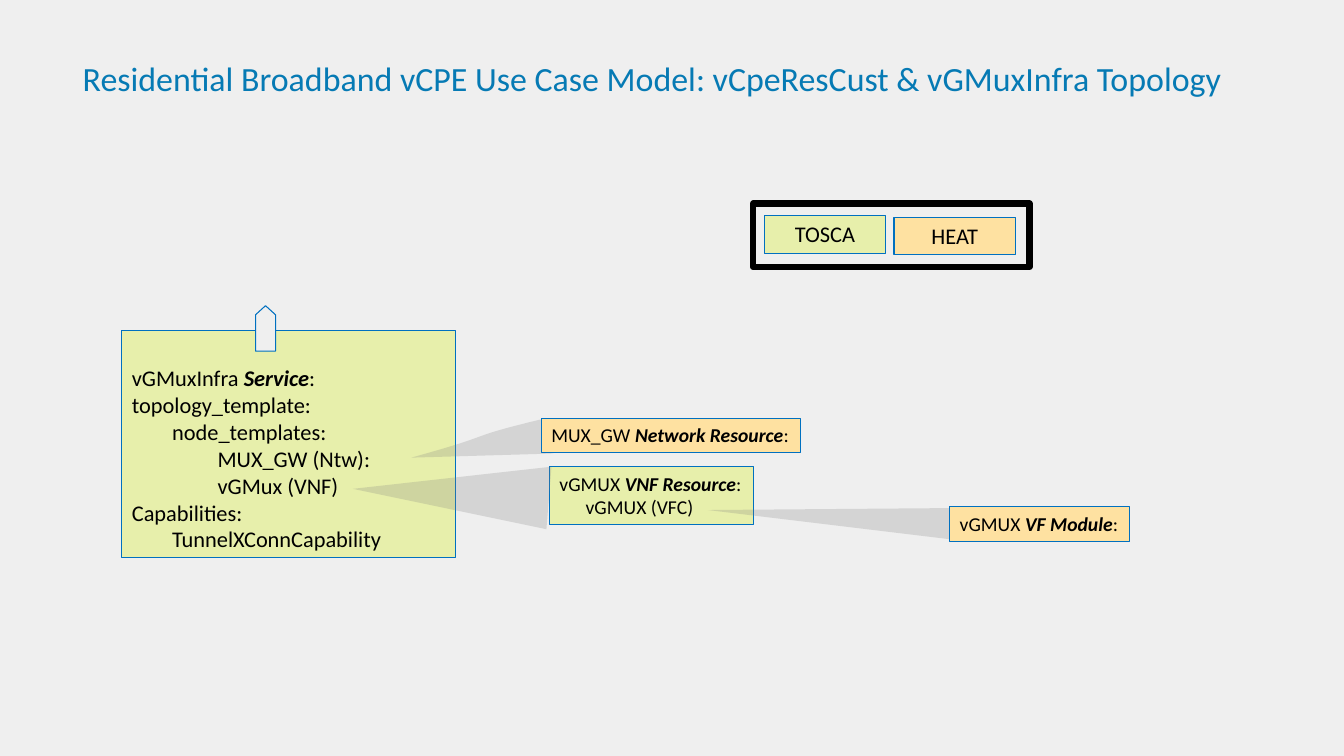
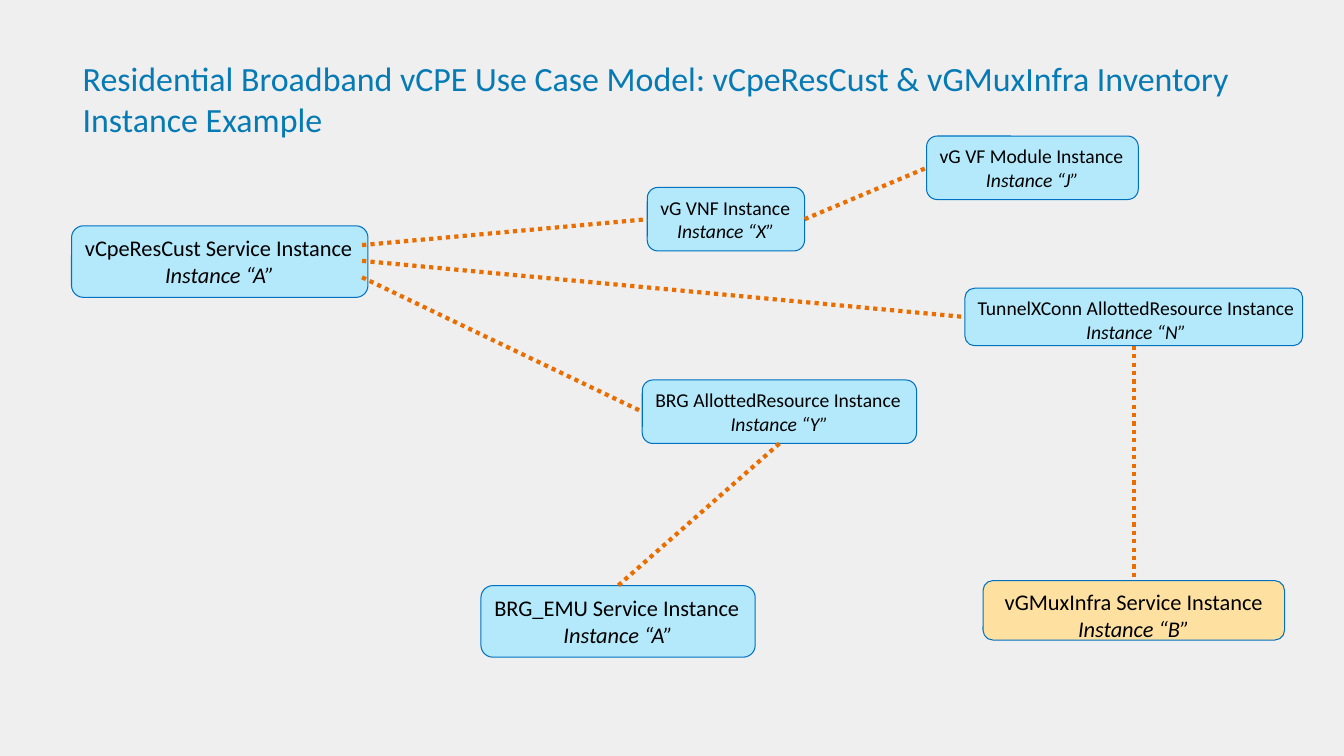
import dataclasses

import lxml.etree
import pptx
import pptx.dml.color
import pptx.enum.dml
import pptx.enum.shapes
import pptx.enum.text
import pptx.oxml.ns
import pptx.util

SLIDE_WIDTH, SLIDE_HEIGHT = pptx.util.Inches(13.33), pptx.util.Inches(7.5)
COLUMNS, ROWS = 133.3, 75  # square cells; every box is (column, row, columns, rows)

FONT = "Calibri"
BACKGROUND, TITLE_BLUE, BLACK = "EFEFEF", "067AB4", "000000"
GREEN, ORANGE, SKY = "E7EFAB", "FEE1A1", "B4E9FB"
OUTLINE, LINK, WEDGE = "0070C0", "EA6D00", "808080"
TITLE_SIZE, LARGE, SMALL = 24.2, 16, 14

SHAPE = pptx.enum.shapes.MSO_SHAPE
ALIGN = pptx.enum.text.PP_ALIGN
TOP, LEFT, BOTTOM, RIGHT = range(4)  # connection sites of a box


@dataclasses.dataclass
class Line:
    """One paragraph: plain text, a bold italic part, then a plain tail."""
    text: str
    strong: str = ""
    tail: str = ""
    indent: float = 0
    centred: bool = False
    italic: bool = False


def x(column):
    return round(SLIDE_WIDTH * column / COLUMNS)


def y(row):
    return round(SLIDE_HEIGHT * row / ROWS)


def place(box):
    left, top, width, height = box
    return x(left), y(top), x(width), y(height)


def within(box, share):
    """Turn shares of a box into a box on the slide grid."""
    left, top, width, height = box
    return (left + share[0] * width, top + share[1] * height,
            share[2] * width, share[3] * height)


def rgb(color):
    return pptx.dml.color.RGBColor.from_string(color)


def paint(shape, fill=None, line=None, weight=0.75):
    shape.shadow.inherit = False
    if fill:
        shape.fill.solid()
        shape.fill.fore_color.rgb = rgb(fill)
    else:
        shape.fill.background()
    if line:
        shape.line.color.rgb = rgb(line)
        shape.line.width = pptx.util.Pt(weight)
    else:
        shape.line.fill.background()


def set_font(paragraph, size, color):
    paragraph.font.name = FONT
    paragraph.font.size = pptx.util.Pt(size)
    paragraph.font.color.rgb = rgb(color)


def write(frame, lines, size):
    frame.word_wrap = False
    frame.vertical_anchor = pptx.enum.text.MSO_ANCHOR.TOP
    for number, line in enumerate(lines):
        paragraph = frame.add_paragraph() if number else frame.paragraphs[0]
        paragraph.alignment = ALIGN.CENTER if line.centred else ALIGN.LEFT
        if line.indent:
            properties = paragraph._p.get_or_add_pPr()
            properties.set("marL", str(x(line.indent)))
            properties.set("indent", "0")
        set_font(paragraph, size, BLACK)
        paragraph.font.italic = line.italic
        for text in filter(None, (line.text, line.strong, line.tail)):
            run = paragraph.add_run()
            run.text = text
            if text == line.strong:
                run.font.bold = run.font.italic = True


def add_box(slide, box, fill, lines=(), size=SMALL, kind=SHAPE.RECTANGLE):
    shape = slide.shapes.add_shape(kind, *place(box))
    paint(shape, fill, OUTLINE)
    write(shape.text_frame, lines, size)
    return shape


def add_titled_slide(deck, text, rows):
    slide = deck.slides.add_slide(deck.slide_layouts[5])
    title = slide.shapes.title
    title.left, title.top, title.width, title.height = place((8.2, 5.7, 121, rows))
    frame = title.text_frame
    frame.text = text
    frame.word_wrap = True
    frame.auto_size = pptx.enum.text.MSO_AUTO_SIZE.NONE
    frame.vertical_anchor = pptx.enum.text.MSO_ANCHOR.TOP
    frame.margin_left = frame.margin_top = frame.margin_right = frame.margin_bottom = 0
    frame.paragraphs[0].alignment = ALIGN.LEFT
    set_font(frame.paragraphs[0], TITLE_SIZE, TITLE_BLUE)
    return slide


def curve(start, control1, control2, end, steps=16):
    """Points along a cubic Bezier curve, from start to end."""
    points = []
    for step in range(steps + 1):
        t = step / steps
        weights = (1 - t) ** 3, 3 * t * (1 - t) ** 2, 3 * t ** 2 * (1 - t), t ** 3
        corners = start, control1, control2, end
        points.append(tuple(sum(w * c[axis] for w, c in zip(weights, corners))
                            for axis in (0, 1)))
    return points


def add_wedge(slide, points):
    """A translucent zoom from a line of text to the box that details it."""
    corners = [(x(column), y(row)) for column, row in points]
    builder = slide.shapes.build_freeform(*corners[0], scale=1.0)
    builder.add_line_segments(corners[1:], close=True)
    wedge = builder.convert_to_shape()
    paint(wedge, WEDGE)
    color = wedge._element.spPr.find(".//" + pptx.oxml.ns.qn("a:srgbClr"))
    lxml.etree.SubElement(color, pptx.oxml.ns.qn("a:alpha"), val="24000")


def add_legend(slide, box):
    for share, fill, label in (((0.04, 0.19, 0.44, 0.59), GREEN, "TOSCA"),
                               ((0.51, 0.22, 0.44, 0.59), ORANGE, "HEAT")):
        add_box(slide, within(box, share), fill, [Line(label, centred=True)], LARGE)
    frame = slide.shapes.add_shape(SHAPE.RECTANGLE, *place(box))
    paint(frame, line=BLACK, weight=4.5)


def add_service(slide, box):
    service = add_box(slide, box, GREEN, [
        Line("vGMuxInfra ", "Service", ":"),
        Line("topology_template:"),
        Line("node_templates:", indent=4),
        Line("MUX_GW (Ntw):", indent=8.5),
        Line("vGMux (VNF)", indent=8.5),
        Line("Capabilities:"),
        Line("TunnelXConnCapability", indent=4),
    ], LARGE)
    service.text_frame.vertical_anchor = pptx.enum.text.MSO_ANCHOR.BOTTOM


def add_capability_arrow(slide, box):
    arrow = add_box(slide, box, BACKGROUND, kind=SHAPE.FLOWCHART_OFFPAGE_CONNECTOR)
    arrow.rotation = 180


def build_topology(deck):
    slide = add_titled_slide(
        deck, "Residential Broadband vCPE Use Case Model: "
              "vCpeResCust & vGMuxInfra Topology", 5)
    service = (12.1, 32.8, 33.1, 22.5)
    add_service(slide, service)
    add_box(slide, (54.5, 46.3, 20.2, 5.7), GREEN,
            [Line("vGMUX ", "VNF Resource", ":"), Line("vGMUX (VFC)", indent=2.6)])
    add_capability_arrow(slide, within(service, (0.4, -0.11, 0.06, 0.2)))

    tip = (40.8, 45.4)
    add_wedge(slide, curve(tip, (50.2, 42.8), (45.4, 43.6), (54.1, 41.5))
              + curve((54.1, 41.5), (54.1, 43.3), (64.8, 43.5), (54.6, 45)))
    add_box(slide, (53.7, 41.5, 25.7, 3.4), ORANGE,
            [Line("MUX_GW ", "Network Resource", ":")])
    add_wedge(slide, [(70.2, 50.6), (94.7, 50.4), (95.1, 53.6)])
    add_box(slide, (94.2, 50.3, 17.8, 3.4), ORANGE, [Line("vGMUX ", "VF Module", ":")])
    add_legend(slide, (74.7, 20.2, 27.4, 6.3))
    add_wedge(slide, [(35, 48.5), (54.7, 46.3), (54.2, 52.5)])


def add_instance(slide, box, name, letter, size=SMALL, fill=SKY, centred=False):
    return add_box(slide, box, fill,
                   [Line(name, centred=centred),
                    Line(f"Instance “{letter}”", centred=True, italic=True)],
                   size, SHAPE.ROUNDED_RECTANGLE)


def add_link(slide, source, target, target_site, source_site=None, share=(0, 0)):
    """Dotted link from a connection site, or from a share of the source box."""
    start = (source.left + round(share[0] * source.width),
             source.top + round(share[1] * source.height))
    link = slide.shapes.add_connector(
        pptx.enum.shapes.MSO_CONNECTOR.STRAIGHT, *start, target.left, target.top)
    if source_site is not None:
        link.begin_connect(source, source_site)
    link.end_connect(target, target_site)
    link.line.color.rgb = rgb(LINK)
    link.line.width = pptx.util.Pt(3)
    link.line.dash_style = pptx.enum.dml.MSO_LINE.ROUND_DOT
    lxml.etree.SubElement(link._element.spPr, pptx.oxml.ns.qn("a:effectLst"))


def build_inventory(deck):
    slide = add_titled_slide(
        deck, "Residential Broadband vCPE Use Case Model: "
              "vCpeResCust & vGMuxInfra Inventory Instance Example", 8.4)
    customer = add_instance(slide, (7.1, 22.4, 29.4, 7.1),
                            "vCpeResCust Service Instance", "A", LARGE)
    infra = add_instance(slide, (97.5, 57.6, 29.9, 5.9),
                         "vGMuxInfra Service Instance", "B", LARGE, ORANGE, True)
    brg = add_instance(slide, (63.7, 37.7, 27.2, 6.3),
                       "BRG AllottedResource Instance", "Y")
    vnf = add_instance(slide, (64.2, 18.6, 15.6, 6.3), "vG VNF Instance", "X")
    tunnel = add_instance(slide, (95.7, 28.6, 33.5, 5.7),
                          "TunnelXConn AllottedResource Instance", "N")
    module = add_instance(slide, (91.9, 13.5, 21, 6.3), "vG VF Module Instance", "J")
    emulator = add_instance(slide, (47.7, 58.1, 27.2, 7.1),
                            "BRG_EMU Service Instance", "A", LARGE)

    for resource, height in ((vnf, 0.27), (tunnel, 0.49), (brg, 0.72)):
        add_link(slide, customer, resource, LEFT, share=(0.98, height))
    add_link(slide, vnf, module, LEFT, RIGHT)
    add_link(slide, brg, emulator, TOP, BOTTOM)
    add_link(slide, tunnel, infra, TOP, BOTTOM)


def main():
    deck = pptx.Presentation()
    deck.slide_width, deck.slide_height = SLIDE_WIDTH, SLIDE_HEIGHT
    backdrop = deck.slide_master.background.fill
    backdrop.solid()
    backdrop.fore_color.rgb = rgb(BACKGROUND)
    build_topology(deck)
    build_inventory(deck)
    deck.save("out.pptx")


if __name__ == "__main__":
    main()
